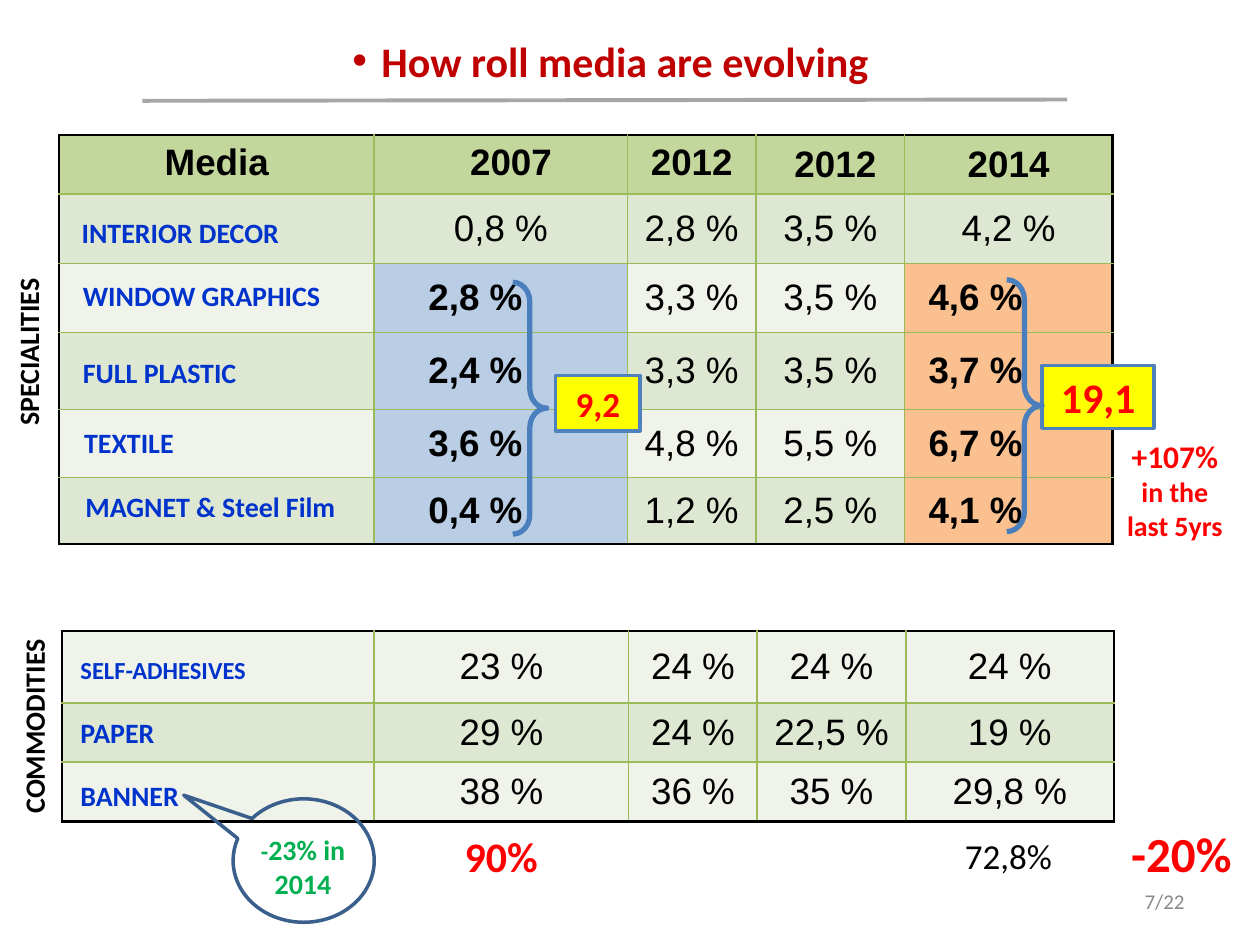
from lxml.etree import SubElement
from pptx import Presentation
from pptx.dml.color import RGBColor
from pptx.enum.shapes import MSO_CONNECTOR as CONN, MSO_SHAPE as SHAPE
from pptx.enum.text import MSO_ANCHOR as ANCHOR, PP_ALIGN as ALIGN
from pptx.oxml.ns import qn
from pptx.util import Inches, Pt

GREEN, BLACK, RED, BLUE = "9BBB59", "000000", "FF0000", "0033CC"
BANDS = ["EFF3EA", "DEE7D1"]


def rgb(value):
    """Turn a hex string into a colour."""
    return RGBColor.from_string(value)


def box(*lengths):
    """Turn inch values into lengths."""
    return [Inches(v) for v in lengths]


class Deck:
    """Hold the style and the current slide."""

    def __init__(self):
        """Start a presentation with one title slide."""
        self.prs = Presentation()
        self.prs.slide_width, self.prs.slide_height = box(10, 7.5)
        self.s = self.prs.slides.add_slide(self.prs.slide_layouts[5])

    def run(self, p, text, size, color, bold=True, name="Calibri"):
        """Add formatted text to a paragraph, breaking at line ends."""
        for i, part in enumerate(text.split("\n")):
            if i:
                p.add_line_break()
            r = p.add_run()
            r.text = part
            fmt = {"size": Pt(size), "bold": bold, "name": name}
            for key, value in fmt.items():
                setattr(r.font, key, value)
            r.font.color.rgb = rgb(color)

    def fill_text(self, sp, paras, color, align, bold=True):
        """Write paragraphs of (text, size) runs into a shape."""
        tf = sp.text_frame
        tf.word_wrap = True
        for i, runs in enumerate(paras):
            p = tf.add_paragraph() if i else tf.paragraphs[0]
            p.alignment = align
            for text, size in runs:
                self.run(p, text, size, color, bold)

    def title(self, at, text):
        """Place the bulleted title."""
        sp = self.s.shapes.title
        for key, value in zip(("left", "top", "width", "height"), box(*at)):
            setattr(sp, key, value)
        sp.text_frame.vertical_anchor = ANCHOR.TOP
        pPr = sp.text_frame.paragraphs[0]._p.get_or_add_pPr()
        indent = Inches(0.23)
        pPr.set("marL", str(indent))
        pPr.set("indent", str(-indent))
        SubElement(pPr, qn("a:buFont"), typeface="Arial")
        SubElement(pPr, qn("a:buChar"), char="•")
        self.fill_text(sp, [[(text, 24)]], "C00000", ALIGN.CENTER)

    def text(self, at, paras, color, align=ALIGN.LEFT, bold=True, rotation=0):
        """Add a text box."""
        sp = self.s.shapes.add_textbox(*box(*at))
        sp.rotation = rotation
        self.fill_text(sp, paras, color, align, bold)
        return sp

    def shape(self, kind, at, line, width, fill=None, adj=()):
        """Add an outlined preset shape."""
        sp = self.s.shapes.add_shape(kind, *box(*at))
        sp.shadow.inherit = False
        if fill:
            sp.fill.solid()
            sp.fill.fore_color.rgb = rgb(fill)
        else:
            sp.fill.background()
        sp.line.color.rgb = rgb(line)
        sp.line.width = Pt(width)
        for i, value in enumerate(adj):
            sp.adjustments[i] = value
        return sp

    def line(self, ends, color, width):
        """Add a straight line."""
        cx = self.s.shapes.add_connector(CONN.STRAIGHT, *box(*ends))
        cx.line.color.rgb = rgb(color)
        cx.line.width = Pt(width)
        SubElement(cx._element.spPr, qn("a:effectLst"))

    def border(self, cell, side, outer):
        """Draw one cell edge, black on the outside of the table."""
        ln = SubElement(cell._tc.get_or_add_tcPr(), qn("a:ln" + side),
                        w=str(Pt(1.5 if outer else 1)))
        fill = SubElement(ln, qn("a:solidFill"))
        SubElement(fill, qn("a:srgbClr"), val=BLACK if outer else GREEN)

    def table(self, at, cols, heights, rows, style):
        """Add a table; style gives each cell's fill and format."""
        frame = self.s.shapes.add_table(len(rows), len(cols), *box(*at))
        tbl = frame.table
        tbl.first_row = tbl.horz_banding = False
        for col, width in zip(tbl.columns, cols):
            col.width = Inches(width)
        for row, height in zip(tbl.rows, heights):
            row.height = Inches(height)
        for r, values in enumerate(rows):
            for c, value in enumerate(values):
                cell = tbl.cell(r, c)
                edges = {"L": c == 0, "R": c == len(cols) - 1,
                         "T": r == 0, "B": r == len(rows) - 1}
                for side, outer in edges.items():
                    self.border(cell, side, outer)
                fill, bold, align, anchor, left = style(r, c)
                cell.fill.solid()
                cell.fill.fore_color.rgb = rgb(fill)
                fmt = {"margin_left": Inches(left), "margin_right": Inches(0.11),
                       "margin_top": Inches(0.06), "margin_bottom": Inches(0.06),
                       "vertical_anchor": anchor}
                for key, val in fmt.items():
                    setattr(cell, key, val)
                p = cell.text_frame.paragraphs[0]
                p.alignment = align
                if value:
                    self.run(p, value, 21, BLACK, bold, "Arial")


def specialities_style(r, c):
    """Return fill, bold, alignment, anchor and left margin."""
    if r == 0:
        anchor = ANCHOR.TOP if c < 3 else ANCHOR.MIDDLE
        left = {1: 0.27, 3: 0.19}.get(c, 0.11)
        return "C3D69B", True, ALIGN.CENTER, anchor, left
    if r > 1 and c in (1, 4):
        fill, left = ("B9CDE5", 0.43) if c == 1 else ("FAC090", 0.19)
        return fill, True, ALIGN.LEFT, ANCHOR.MIDDLE, left
    return BANDS[r % 2], False, ALIGN.CENTER, ANCHOR.MIDDLE, 0.11


def commodities_style(r, c):
    """Return fill, bold, alignment, anchor and left margin."""
    return BANDS[r % 2], False, ALIGN.CENTER, ANCHOR.MIDDLE, 0.11


def main():
    """Build the slide."""
    d = Deck()
    d.title((1.16, 0.23, 7.37, 0.51), "How roll media are evolving")
    d.table((0.49, 5.01, 8.36, 1.51), [2.48, 2.02, 1.02, 1.18, 1.65],
            [0.57, 0.47, 0.47],
            [["", "23 %", "24 %", "24 %", "24 %"],
             ["", "29 %", "24 %", "22,5 %", "19 %"],
             ["", "38 %", "36 %", "35 %", "29,8 %"]], commodities_style)
    d.table((0.47, 1.07, 8.36, 3.26), [2.5, 2.01, 1.02, 1.18, 1.65],
            [0.47, 0.55, 0.55, 0.61, 0.54, 0.53],
            [["Media", "2007", "2012", "2012", "2014"],
             ["", "0,8 %", "2,8 %", "3,5 %", "4,2 %"],
             ["", "2,8 %", "3,3 %", "3,5 %", "4,6 %"],
             ["", "2,4 %", "3,3 %", "3,5 %", "3,7 %"],
             ["", "3,6 %", "4,8 %", "5,5 %", "6,7 %"],
             ["", "0,4 %", "1,2 %", "2,5 %", "4,1 %"]], specialities_style)

    for label, left, top, size in [
            ("INTERIOR DECOR", 0.55, 1.66, 16), ("WINDOW GRAPHICS", 0.56, 2.16, 16),
            ("FULL PLASTIC", 0.56, 2.77, 16), ("TEXTILE", 0.57, 3.33, 16),
            ("MAGNET & Steel Film", 0.58, 3.84, 16),
            ("SELF-ADHESIVES", 0.54, 5.15, 14), ("PAPER", 0.54, 5.63, 16),
            ("BANNER", 0.54, 6.13, 16)]:
        d.text((left, top, 2.27, 0.37), [[(label, size)]], BLUE)

    for total, size, at, brace in [
            ("9,2", 20, (4.41, 2.98, 0.67, 0.44), (4.07, 2.24, 0.27, 2)),
            ("19,1", 24, (8.27, 2.9, 0.89, 0.5), (7.99, 2.22, 0.28, 2))]:
        sp = d.shape(SHAPE.RECTANGLE, at, "4F81BD", 2, "FFFF00")
        d.fill_text(sp, [[(total, size)]], RED, ALIGN.CENTER)
        d.shape(SHAPE.RIGHT_BRACE, brace, "4B7EBC", 3, adj=(0.57, 0.5))

    for group, at in [("SPECIALITIES", (-0.8, 2.61, 2.05, 0.37)),
                      ("COMMODITIES", (-0.63, 5.58, 1.8, 0.37))]:
        d.text(at, [[(group, 16)]], BLACK, ALIGN.CENTER, rotation=270)

    d.text((8.76, 3.42, 1.13, 0.94),
           [[("+107%", 18)], [("in the\nlast 5yrs", 16)]], RED, ALIGN.CENTER)
    d.line((1.13, 0.8, 8.47, 0.79), "A6A6A6", 2.25)
    d.text((3.59, 6.54, 0.83, 0.51), [[("90%", 24)]], RED)
    d.text((7.56, 6.57, 1.02, 0.44), [[("72,8%", 20)]], BLACK, bold=False)
    d.text((8.88, 6.49, 1.4, 0.57), [[("-20%", 28)]], RED)
    d.text((1.84, 6.56, 1.13, 0.64), [[("-", 14), ("23% in 2014", 16)]],
           "00B050", ALIGN.CENTER)
    d.shape(SHAPE.OVAL_CALLOUT, (1.85, 6.34, 1.12, 0.98), "3A5F8C", 2,
            adj=(-0.85, -0.53))
    page = d.text((7.17, 6.95, 2.33, 0.4), [[("7/22", 12)]], "898989",
                  ALIGN.RIGHT, bold=False)
    page.text_frame.vertical_anchor = ANCHOR.MIDDLE
    d.prs.save("out.pptx")


if __name__ == "__main__":
    main()
